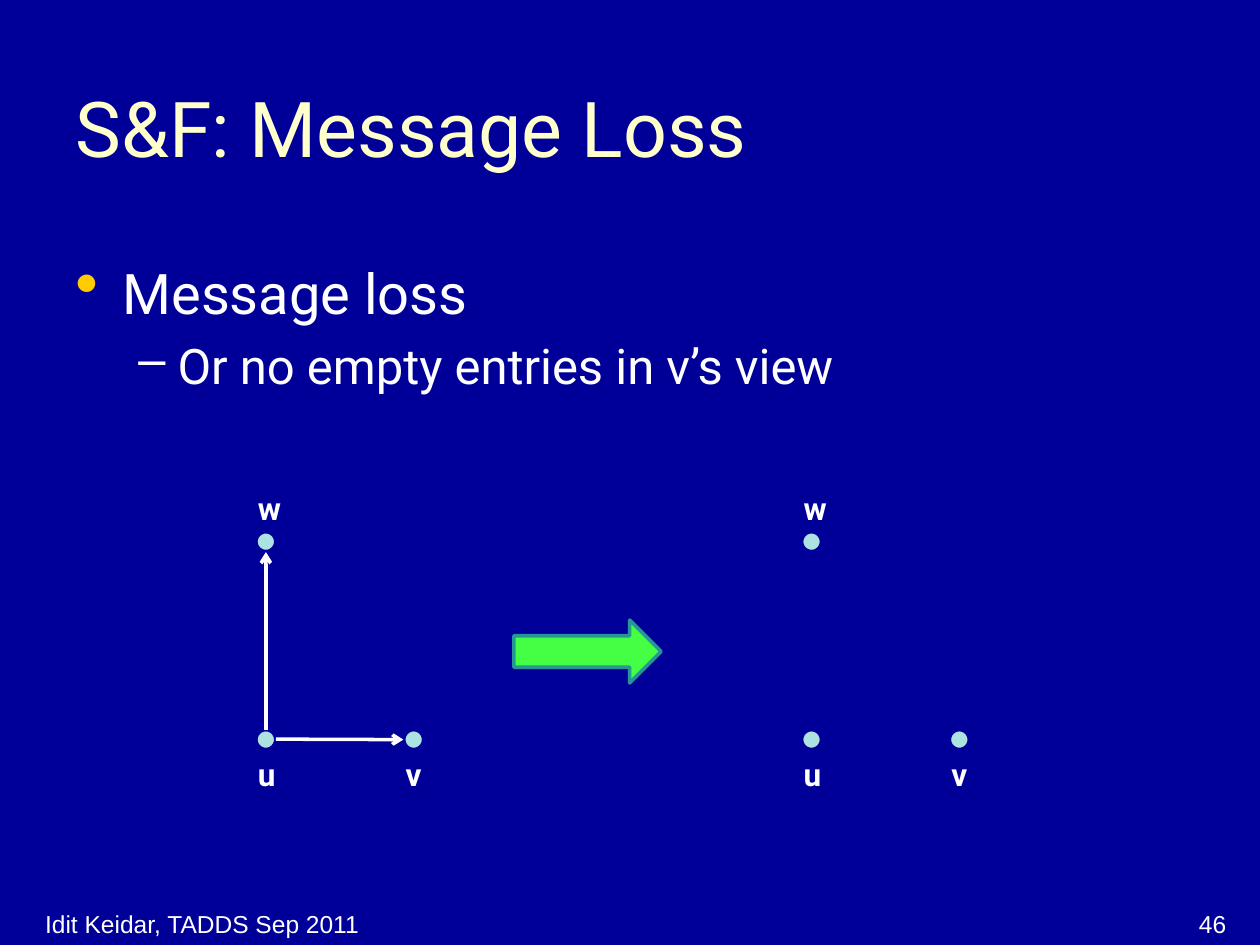
from lxml import etree
from pptx import Presentation
from pptx import util as u
from pptx.dml.color import RGBColor
from pptx.enum import shapes, text
from pptx.oxml.ns import qn

NAVY = RGBColor(0x00, 0x00, 0x99)
CREAM = RGBColor(0xFF, 0xFF, 0xCC)
WHITE = RGBColor(0xFF, 0xFF, 0xFF)
AQUA = RGBColor(0xAD, 0xE2, 0xE2)
GREEN = RGBColor(0x44, 0xFF, 0x44)
TEAL = RGBColor(0x26, 0x97, 0x97)
GOLD = RGBColor(0xFF, 0xCC, 0x00)


def write(para, words, color=WHITE, **formats):
    span = para.add_run()
    span.text = words
    span.font.color.rgb = color
    for name, value in formats.items():
        setattr(span.font, name, value)


def draw(kind, left, top, width, height, fill, line):
    shape = slide.shapes.add_shape(kind, u.Cm(left), u.Cm(top), u.Cm(width), u.Cm(height))
    shape.shadow.inherit = False
    shape.fill.solid()
    shape.fill.fore_color.rgb = fill
    shape.line.color.rgb = line
    shape.line.width = u.Pt(2)


deck = Presentation()
deck.slide_width, deck.slide_height = u.Cm(25.4), u.Cm(19.05)
slide = deck.slides.add_slide(deck.slide_layouts[5])
slide.background.fill.solid()
slide.background.fill.fore_color.rgb = NAVY

title = slide.shapes.title
title_place = {"left": 1.27, "top": 0.64, "width": 22.86, "height": 3.84}
for name, value in title_place.items():
    setattr(title, name, u.Cm(value))
title.text_frame.vertical_anchor = text.MSO_ANCHOR.MIDDLE
para = title.text_frame.paragraphs[0]
para.alignment = text.PP_ALIGN.LEFT
write(para, "S&F: Message Loss", CREAM, size=u.Pt(44), name="Roboto")

body = slide.shapes.add_textbox(u.Cm(1.27), u.Cm(5.08), u.Cm(22.86), u.Cm(3.6))
body.text_frame.word_wrap = True
bullets = [
    ("Message loss", 32, 0.95, -0.95, 0, "•", GOLD, 120),
    ("Or no empty entries in v’s view", 28, 2.06, -0.79, 5.6, "–", WHITE, 100),
]
for index, (words, size, margin, indent, gap, mark, color, percent) in enumerate(bullets):
    para = body.text_frame.add_paragraph() if index else body.text_frame.paragraphs[0]
    para.level = index
    para.space_before = u.Pt(gap)
    properties = para._p.get_or_add_pPr()
    properties.set("marL", str(u.Cm(margin)))
    properties.set("indent", str(u.Cm(indent)))
    bullet_color = etree.SubElement(properties, qn("a:buClr"))
    etree.SubElement(bullet_color, qn("a:srgbClr"), val=str(color))
    etree.SubElement(properties, qn("a:buSzPct"), val=str(percent * 1000))
    etree.SubElement(properties, qn("a:buChar"), char=mark)
    write(para, words, size=u.Pt(size), name="Roboto")

nodes = [("w", 0, 10.72, 9.73), ("u", 0, 14.71, 15.09), ("v", 2.98, 14.71, 15.09)]
for graph_left in (5.16, 16.16):
    for name, offset, dot_top, label_top in nodes:
        left = graph_left + offset
        draw(shapes.MSO_SHAPE.OVAL, left, dot_top, 0.4, 0.4, AQUA, NAVY)
        label = slide.shapes.add_textbox(u.Cm(left - 0.21), u.Cm(label_top), u.Cm(0.79), u.Cm(1.02))
        label.text_frame.word_wrap = True
        write(label.text_frame.paragraphs[0], name, size=u.Pt(18), name="Roboto", bold=True)

for ends in [(5.36, 14.71, 5.36, 11.13), (5.56, 14.9, 8.13, 14.91)]:
    edge = slide.shapes.add_connector(shapes.MSO_CONNECTOR.STRAIGHT, *map(u.Cm, ends))
    edge.line.color.rgb = WHITE
    edge.line.width = u.Pt(2)
    etree.SubElement(edge.line._get_or_add_ln(), qn("a:tailEnd"), type="arrow")
    etree.SubElement(edge._element.spPr, qn("a:effectLst"))

draw(shapes.MSO_SHAPE.RIGHT_ARROW, 10.36, 12.5, 2.97, 1.27, GREEN, TEAL)

footers = [
    ("46", 19.05, 5.92, text.PP_ALIGN.RIGHT),
    ("Idit Keidar, TADDS Sep 2011", 0.66, 8.43, text.PP_ALIGN.LEFT),
]
for words, left, width, alignment in footers:
    footer = slide.shapes.add_textbox(u.Cm(left), u.Cm(17.96), u.Cm(width), u.Cm(1.09))
    footer.text_frame.word_wrap = True
    footer.text_frame.vertical_anchor = text.MSO_ANCHOR.BOTTOM
    para = footer.text_frame.paragraphs[0]
    para.alignment = alignment
    write(para, words, size=u.Pt(14), name="Arial")

deck.save("out.pptx")
